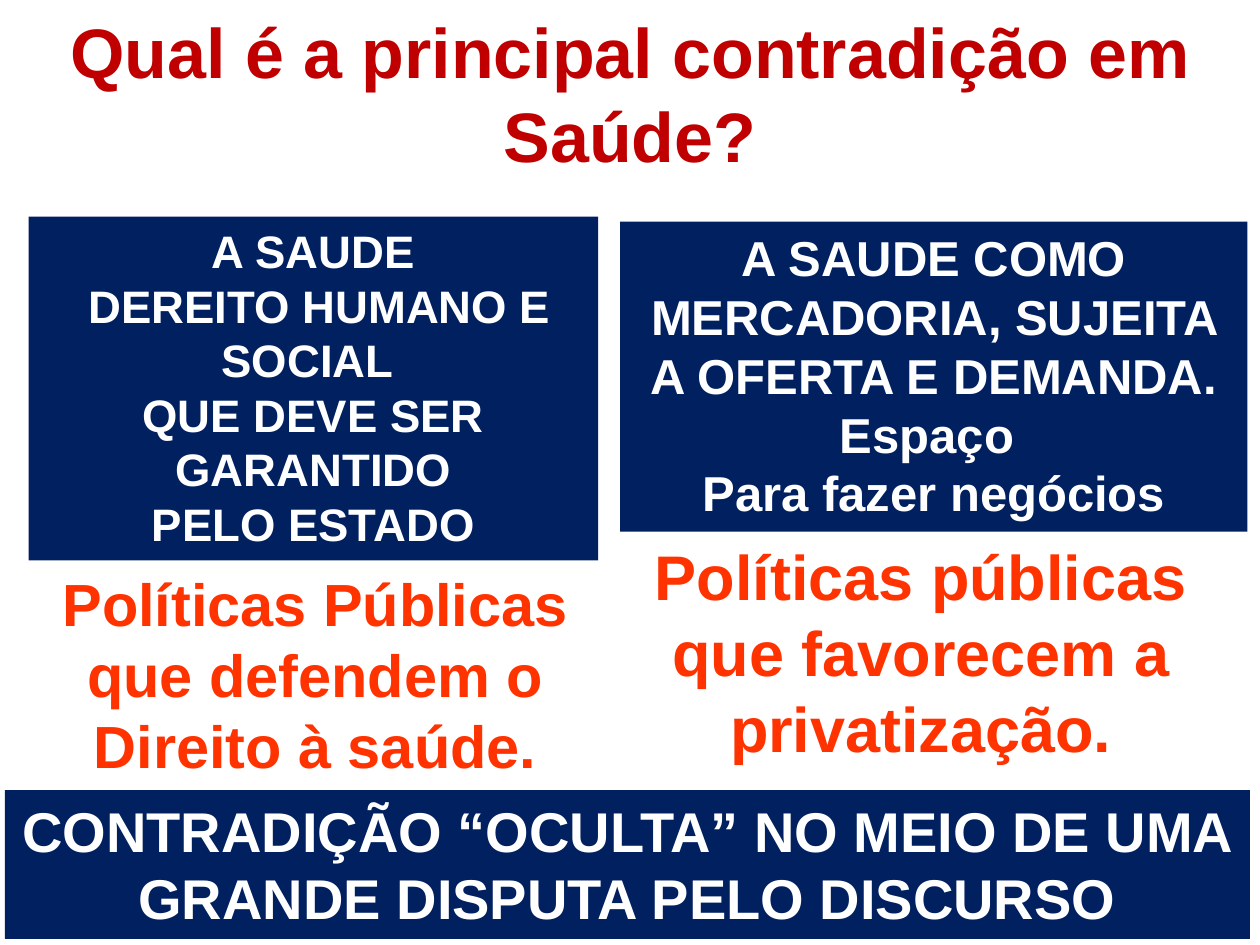
from pptx import Presentation
from pptx.dml.color import RGBColor
from pptx.enum.shapes import MSO_SHAPE
from pptx.enum.text import MSO_ANCHOR, MSO_AUTO_SIZE, PP_ALIGN
from pptx.util import Cm, Pt

RECTANGLE = MSO_SHAPE.RECTANGLE
TOP = MSO_ANCHOR.TOP
NO_FIT = MSO_AUTO_SIZE.NONE
CENTER = PP_ALIGN.CENTER

NAVY, WHITE, ORANGE, RED = "002060", "FFFFFF", "FF3300", "C00000"
LINE_HEIGHT = 1.2


def color(hex_value):
    return RGBColor.from_string(hex_value)


def write(target, lines, size, text_color, fill=None):
    if fill:
        target.shadow.inherit = False
        target.fill.solid()
        target.fill.fore_color.rgb = color(fill)
        target.line.fill.background()
    frame = target.text_frame
    frame_format = {"word_wrap": True, "auto_size": NO_FIT, "vertical_anchor": TOP}
    for attribute, value in frame_format.items():
        setattr(frame, attribute, value)
    frame.text = "\n".join(lines)
    paragraph_format = {"alignment": CENTER, "line_spacing": Pt(size * LINE_HEIGHT),
                        "space_before": Pt(0)}
    font_format = {"name": "Arial", "size": Pt(size), "bold": True}
    for paragraph in frame.paragraphs:
        for attribute, value in paragraph_format.items():
            setattr(paragraph, attribute, value)
        for run in paragraph.runs:
            for attribute, value in font_format.items():
                setattr(run.font, attribute, value)
            run.font.color.rgb = color(text_color)


deck = Presentation()
deck.slide_width, deck.slide_height = Cm(25.4), Cm(19.05)
slide = deck.slides.add_slide(deck.slide_layouts[5])

question = slide.shapes.title
question_place = {"left": 0, "top": 0.05, "width": 25.4, "height": 3.68}
for attribute, value in question_place.items():
    setattr(question, attribute, Cm(value))
write(question, ["Qual é a principal contradição em Saúde?"], 40, RED)

sides = [
    {
        "view": ["A SAUDE COMO MERCADORIA, SUJEITA A OFERTA E DEMANDA.",
                 "Espaço ", "Para fazer negócios"],
        "view_place": (12.5, 4.47, 12.65, 6.25), "view_size": 28,
        "policy": "Políticas públicas que favorecem a privatização.",
        "policy_place": (11.91, 10.72, 13.31, 4.88), "policy_size": 36,
    },
    {
        "view": ["A SAUDE", " DEREITO HUMANO E SOCIAL ",
                 "QUE DEVE SER GARANTIDO", "PELO ESTADO"],
        "view_place": (0.58, 4.37, 11.48, 6.93), "view_size": 26,
        "policy": "Políticas Públicas que defendem o Direito à saúde.",
        "policy_place": (0.41, 11.3, 11.89, 4.62), "policy_size": 34,
    },
]
for side in sides:
    group = slide.shapes.add_group_shape()
    view = group.shapes.add_shape(RECTANGLE, *map(Cm, side["view_place"]))
    write(view, side["view"], side["view_size"], WHITE, NAVY)
    policy = group.shapes.add_textbox(*map(Cm, side["policy_place"]))
    write(policy, [side["policy"]], side["policy_size"], ORANGE)

conclusion = slide.shapes.add_shape(RECTANGLE, Cm(0.1), Cm(15.93), Cm(25.1), Cm(3))
write(conclusion, ["CONTRADIÇÃO “OCULTA” NO MEIO DE UMA GRANDE DISPUTA PELO DISCURSO"],
      32, WHITE, NAVY)

deck.save("out.pptx")
